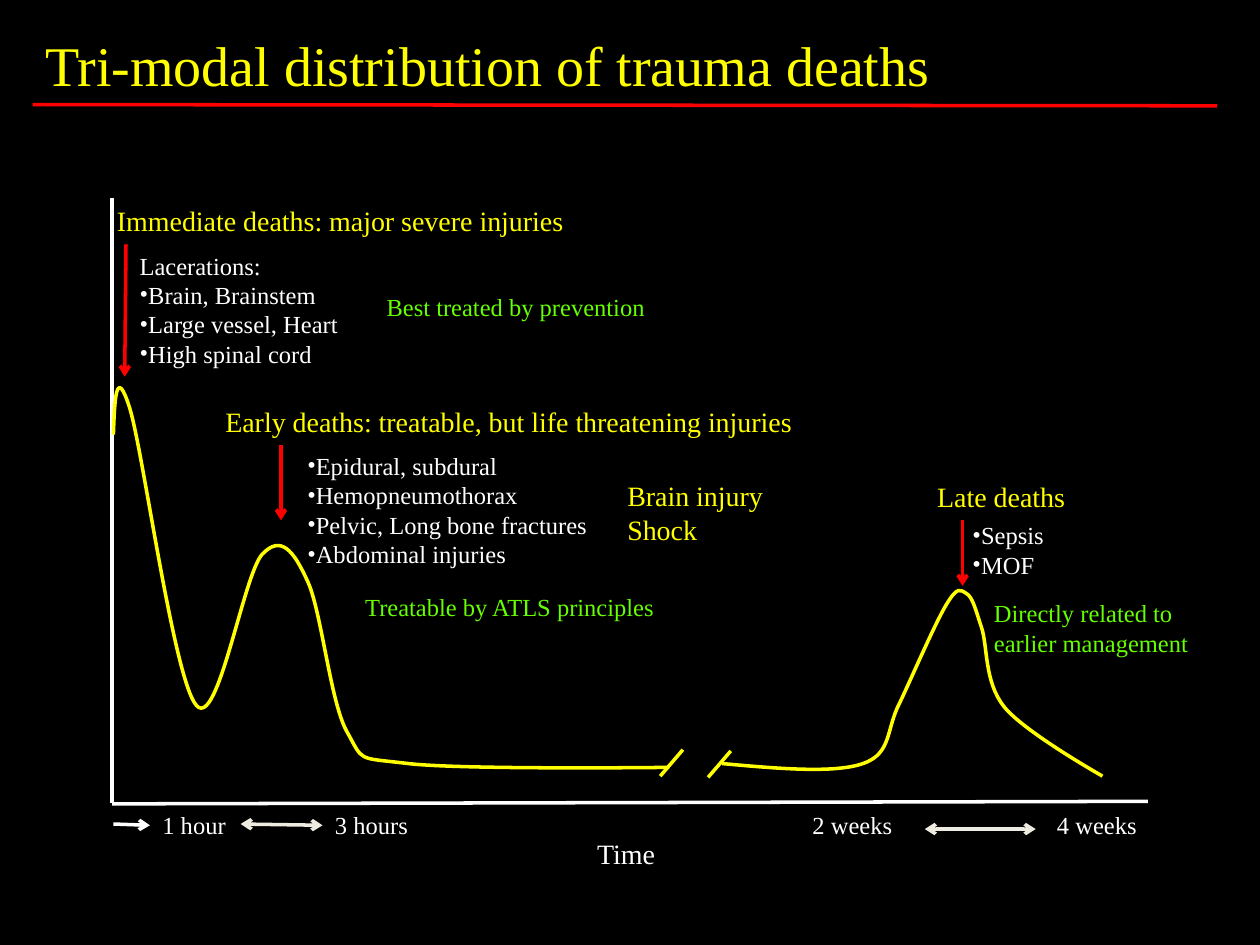
import lxml.etree
import pptx
import pptx.dml.color
import pptx.enum.shapes
import pptx.enum.text
import pptx.oxml.ns
import pptx.util
from pptx.util import Inches

FONT = "Times New Roman"
YELLOW, WHITE, RED, GREEN, CREAM = "FFFF00", "FFFFFF", "FF0000", "66FF00", "EEECE1"

# Start point, then two control points and an end point for each segment.
EARLY_CURVE = [
    (0.9, 3.45),
    (0.91, 3.17), (0.92, 2.89), (1.03, 3.24),
    (1.14, 3.6), (1.38, 5.4), (1.56, 5.6),
    (1.73, 5.79), (1.93, 4.57), (2.08, 4.4),
    (2.23, 4.24), (2.33, 4.37), (2.44, 4.61),
    (2.55, 4.84), (2.62, 5.56), (2.75, 5.8),
    (2.89, 6.05), (2.82, 6.01), (3.24, 6.06),
    (3.67, 6.11), (5.31, 6.09), (5.31, 6.09),
]
LATE_CURVE = [
    (5.73, 6.06),
    (6.17, 6.1), (6.62, 6.14), (6.85, 6.06),
    (7.08, 5.98), (7.03, 5.79), (7.14, 5.58),
    (7.24, 5.37), (7.42, 4.95), (7.51, 4.8),
    (7.6, 4.65), (7.62, 4.68), (7.67, 4.71),
    (7.72, 4.74), (7.74, 4.83), (7.79, 4.98),
    (7.84, 5.13), (7.81, 5.41), (7.97, 5.61),
    (8.13, 5.81), (8.75, 6.16), (8.75, 6.16),
]


def rgb(color):
    return pptx.dml.color.RGBColor.from_string(color)


def add_xml(parent, tag, **attrs):
    return lxml.etree.SubElement(parent, pptx.oxml.ns.qn(tag), attrs)


def style_line(line, color):
    line.color.rgb = rgb(color)
    line.width = pptx.util.Pt(2)


def add_text(s, text, left, top, width, height, size=14, color=WHITE,
             bullets_from=None, wrap=False):
    """Add a text box; paragraphs from index bullets_from on get a bullet."""
    box = s.shapes.add_textbox(*map(Inches, (left, top, width, height)))
    tf = box.text_frame
    tf.word_wrap = wrap
    tf.auto_size = pptx.enum.text.MSO_AUTO_SIZE.SHAPE_TO_FIT_TEXT
    for i, line in enumerate(text.split("\n")):
        p = tf.paragraphs[0] if i == 0 else tf.add_paragraph()
        if bullets_from is not None and i >= bullets_from:
            props = p._p.get_or_add_pPr()
            add_xml(props, "a:buFont", typeface=FONT)
            add_xml(props, "a:buChar", char="•")
        r = p.add_run()
        r.text = line
        r.font.name = FONT
        r.font.size = pptx.util.Pt(size)
        r.font.color.rgb = rgb(color)


def add_line(s, x1, y1, x2, y2, color, head=False, tail=False):
    line = s.shapes.add_connector(pptx.enum.shapes.MSO_CONNECTOR.STRAIGHT,
                                  *map(Inches, (x1, y1, x2, y2)))
    style_line(line.line, color)
    ln = line.line._get_or_add_ln()
    for tag, wanted in (("a:headEnd", head), ("a:tailEnd", tail)):
        if wanted:
            add_xml(ln, tag, type="arrow")
    add_xml(line._element.spPr, "a:effectLst")


def add_curve(s, points, color):
    """Draw a freeform and turn each three of its segments into a Bézier."""
    start, *rest = [(Inches(x), Inches(y)) for x, y in points]
    builder = s.shapes.build_freeform(*start)
    builder.add_line_segments(rest, close=False)
    shape = builder.convert_to_shape()
    shape.shadow.inherit = False
    shape.fill.background()
    style_line(shape.line, color)

    segments = list(shape._element.iter(pptx.oxml.ns.qn("a:lnTo")))
    outline = segments[0].getparent()
    for i in range(0, len(segments), 3):
        bezier = add_xml(outline, "a:cubicBezTo")
        for segment in segments[i:i + 3]:
            bezier.append(segment[0])
            outline.remove(segment)


def add_axes(s):
    add_line(s, 0.89, 1.57, 0.89, 6.37, WHITE)
    add_line(s, 9.11, 6.36, 0.89, 6.38, WHITE)
    for label, left, width in (("1 hour", 1.19, 0.72), ("3 hours", 2.56, 0.79),
                               ("2 weeks", 6.35, 0.84), ("4 weeks", 8.29, 0.84)):
        add_text(s, label, left, 6.38, width, 0.34)
    add_text(s, "Time", 4.64, 6.59, 0.67, 0.37, size=16)
    add_line(s, 0.9, 6.54, 1.19, 6.55, WHITE, tail=True)
    add_line(s, 1.91, 6.54, 2.56, 6.55, CREAM, head=True, tail=True)
    add_line(s, 7.34, 6.58, 8.22, 6.58, CREAM, head=True, tail=True)


def add_curves(s):
    add_curve(s, EARLY_CURVE, YELLOW)
    add_curve(s, LATE_CURVE, YELLOW)
    for x, y in ((5.24, 5.95), (5.62, 5.96)):
        add_line(s, x + 0.18, y, x, y + 0.21, YELLOW)


def add_peaks(s):
    headings = (
        ("Immediate deaths: major severe injuries", 0.83, 1.57, 3.79, 0.37),
        ("Early deaths: treatable, but life threatening injuries", 1.69, 3.16, 4.76, 0.37),
        ("Late deaths", 7.34, 3.76, 1.23, 0.37),
        ("Brain injury\nShock", 4.88, 3.75, 1.29, 0.64),
    )
    for heading in headings:
        add_text(s, *heading, size=16, color=YELLOW)

    add_text(s, "Lacerations:\nBrain, Brainstem\nLarge vessel, Heart\nHigh spinal cord",
             1.01, 1.94, 1.79, 1.04, bullets_from=1)
    add_text(s, "Epidural, subdural\nHemopneumothorax\nPelvic, Long bone fractures\n"
             "Abdominal injuries", 2.34, 3.53, 2.45, 1.04, bullets_from=0)
    add_text(s, "Sepsis\nMOF", 7.62, 4.08, 0.8, 0.57, bullets_from=0)

    for arrow in ((1, 1.94, 0.99, 2.99), (2.23, 3.53, 2.23, 4.13), (7.64, 4.13, 7.64, 4.65)):
        add_line(s, *arrow, RED, tail=True)

    add_text(s, "Best treated by prevention", 2.97, 2.27, 2.27, 0.34, color=GREEN)
    add_text(s, "Treatable by ATLS principles", 2.8, 4.65, 2.5, 0.34, color=GREEN)
    add_text(s, "Directly related to earlier management", 7.79, 4.7, 1.91, 0.57,
             color=GREEN, wrap=True)


def main():
    prs = pptx.Presentation()
    prs.slide_width, prs.slide_height = Inches(10), Inches(7.5)
    s = prs.slides.add_slide(prs.slide_layouts[6])
    s.background.fill.solid()
    s.background.fill.fore_color.rgb = rgb("000000")

    add_text(s, "Tri-modal distribution of trauma deaths", 0.26, 0.19, 7.29, 0.64,
             size=32, color=YELLOW)
    add_line(s, 0.26, 0.83, 9.66, 0.84, RED)
    add_axes(s)
    add_curves(s)
    add_peaks(s)
    prs.save("out.pptx")


if __name__ == "__main__":
    main()
